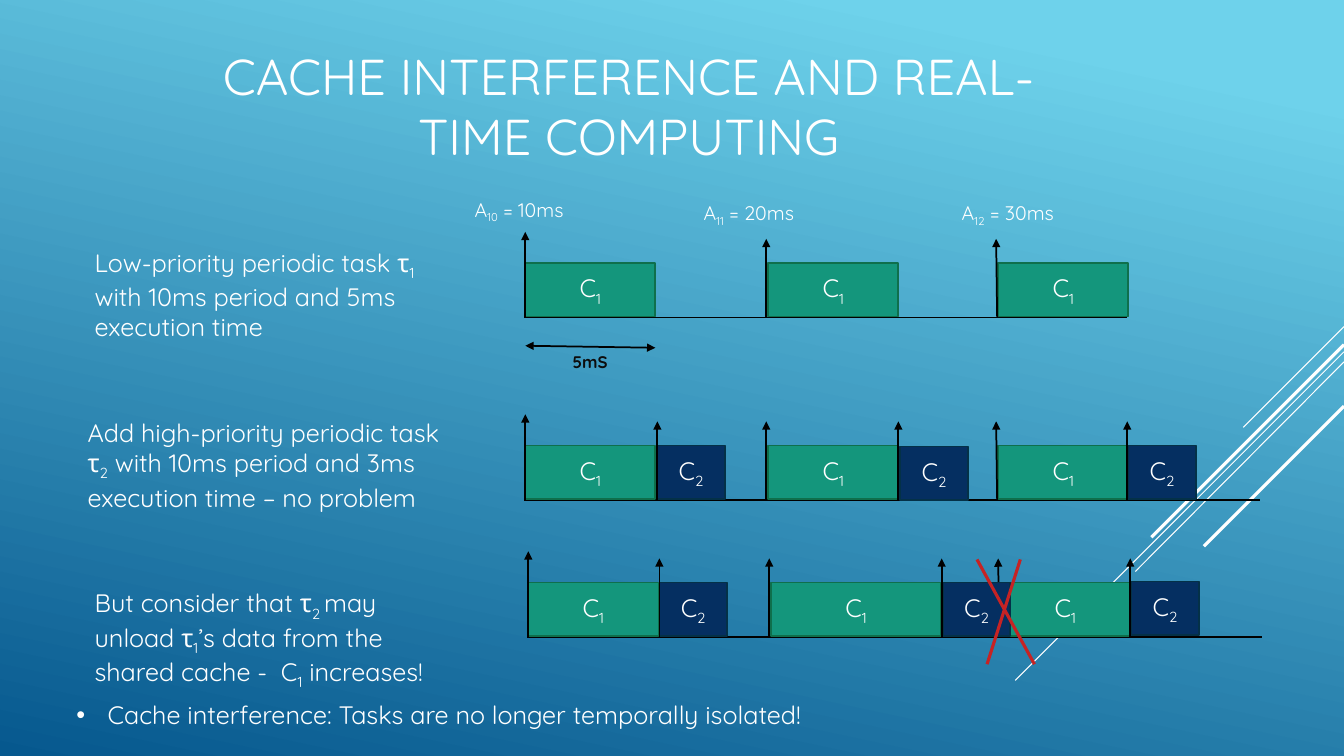
"""Builds the slide on cache interference between two periodic tasks."""
from dataclasses import dataclass

from lxml.etree import SubElement
from pptx import Presentation
from pptx.dml.color import RGBColor
from pptx.enum.shapes import MSO_CONNECTOR, MSO_SHAPE
from pptx.enum.text import MSO_ANCHOR, MSO_AUTO_SIZE, PP_ALIGN
from pptx.oxml.ns import qn
from pptx.slide import Slide
from pptx.text.text import TextFrame
from pptx.util import Emu, Pt

EMU_PER_PX = 9144


@dataclass(frozen=True)
class Theme:
    font: str = "Quicksand"
    white: str = "FFFFFF"
    black: str = "000000"
    near_black: str = "0D0D0D"
    red: str = "C62324"
    sky: str = "6ED2EB"
    deep: str = "06588E"
    task_fills: tuple[str, str] = ("14967C", "052F61")
    task_edges: tuple[str, str] = ("0F6F4C", "043148")
    title: int = 36
    body: int = 18
    release: int = 14
    duration: int = 12
    hairline: float = 0.75
    axis: float = 1.25
    bold_line: float = 2.25


THEME = Theme()


@dataclass(frozen=True)
class Line:
    x1: int
    y1: int
    x2: int
    y2: int
    color: str = THEME.black
    weight: float = THEME.axis
    head: bool = False
    tail: bool = False


@dataclass(frozen=True)
class Label:
    x: int
    y: int
    w: int
    h: int
    text: str
    size: int = THEME.body
    color: str = THEME.white
    bold: bool = False
    align: PP_ALIGN = PP_ALIGN.LEFT
    anchor: MSO_ANCHOR = MSO_ANCHOR.TOP
    grow: bool = True
    bullet: bool = False


@dataclass(frozen=True)
class Job:
    x: int
    w: int
    dy: int = 0


@dataclass(frozen=True)
class Release:
    x: int
    rise: int = 78
    lean: int = 0


@dataclass(frozen=True)
class Timeline:
    left: int
    right: int
    base: int
    jobs: tuple[tuple[Job, ...], ...]
    releases: tuple[tuple[Release, ...], ...]


C1_W, C2_W, JOB_H = 129, 67, 53
LOW_JOBS = (Job(521, C1_W), Job(762, C1_W), Job(990, C1_W))
LOW_RELEASES = (Release(521, 85), Release(760), Release(989, lean=-1))

TIMELINES = (
    Timeline(520, 1118, 315, (LOW_JOBS,), (LOW_RELEASES,)),
    Timeline(520, 1250, 496,
             (LOW_JOBS, (Job(652, C2_W), Job(893, C2_W, 1), Job(1119, C2_W))),
             (LOW_RELEASES, (Release(652), Release(891), Release(1118)))),
    Timeline(523, 1252, 632,
             ((Job(524, C1_W), Job(765, 168), Job(992, C1_W)),
              (Job(654, C2_W), Job(935, C2_W), Job(1122, C2_W, -1))),
             ((Release(524, 85), Release(763), Release(991, lean=-1)),
              (Release(654), Release(934), Release(1121)))),
)

RAYS = tuple(Line(1333, y1, x2, y2, THEME.white, weight) for y1, x2, y2, weight in (
    (324, 1233, 424, THEME.hairline),
    (349, 1007, 675, THEME.hairline),
    (359, 1126, 567, THEME.hairline),
    (342, 1142, 533, THEME.bold_line),
    (403, 1194, 542, THEME.bold_line),
))

MARKS = (
    Line(521, 343, 650, 345, head=True, tail=True),
    Line(969, 555, 1026, 659, THEME.red, THEME.bold_line),
    Line(1012, 555, 979, 659, THEME.red, THEME.bold_line),
)

LABELS = (
    Label(157, 22, 933, 165, "CACHE INTERFERENCE AND REAL-TIME COMPUTING", THEME.title,
          align=PP_ALIGN.CENTER, anchor=MSO_ANCHOR.MIDDLE, grow=False),
    Label(461, 191, 189, 34, "A_10_ = 10ms", THEME.release),
    Label(688, 194, 189, 34, "A_11_ = 20ms", THEME.release),
    Label(944, 194, 189, 34, "A_12_ = 30ms", THEME.release),
    Label(84, 240, 377, 101,
          "Low-priority periodic task τ_1_ with 10ms period and 5ms execution time"),
    Label(77, 409, 385, 101, "Add high-priority periodic task τ_2_ with 10ms period "
                             "and 3ms execution time – no problem"),
    Label(558, 344, 92, 30, "5mS", THEME.duration, THEME.near_black, bold=True),
    Label(84, 578, 385, 101, "But consider that τ_2 _may unload τ_1_’s data from the "
                             "shared cache -  C_1_ increases!"),
    Label(66, 689, 1167, 40, "Cache interference: Tasks are no longer temporally isolated!",
          bullet=True),
)


def px(n: int) -> Emu:
    """Turn px into EMU."""
    return Emu(n * EMU_PER_PX)


def rgb(color: str) -> RGBColor:
    """Turn a hex string into a colour."""
    return RGBColor.from_string(color)


def write(tf: TextFrame, label: Label) -> None:
    """Write the text run by run, with subscripts between underscores."""
    tf.word_wrap = True
    tf.vertical_anchor = label.anchor
    p = tf.paragraphs[0]
    p.alignment = label.align
    for i, part in enumerate(label.text.split("_")):
        if not part:
            continue
        r = p.add_run()
        r.text = part
        r.font.name = THEME.font
        r.font.size = Pt(label.size)
        r.font.bold = label.bold
        r.font.color.rgb = rgb(label.color)
        if i % 2:
            r._r.get_or_add_rPr().set("baseline", "-25000")
    if label.bullet:
        pPr = p._p.get_or_add_pPr()
        pPr.set("marL", str(px(31)))
        pPr.set("indent", str(px(-31)))
        SubElement(pPr, qn("a:buFont")).set("typeface", "Arial")
        SubElement(pPr, qn("a:buChar")).set("char", "•")


def draw_label(s: Slide, label: Label) -> None:
    """Draw a text box."""
    tf = s.shapes.add_textbox(px(label.x), px(label.y), px(label.w), px(label.h)).text_frame
    write(tf, label)
    tf.auto_size = MSO_AUTO_SIZE.SHAPE_TO_FIT_TEXT if label.grow else MSO_AUTO_SIZE.NONE


def draw_line(s: Slide, line: Line) -> None:
    """Draw a straight line with optional arrowheads."""
    c = s.shapes.add_connector(MSO_CONNECTOR.STRAIGHT, px(line.x1), px(line.y1),
                               px(line.x2), px(line.y2))
    c.line.color.rgb = rgb(line.color)
    c.line.width = Pt(line.weight)
    spPr = c._element.spPr
    ln = spPr.find(qn("a:ln"))
    for tag, wanted in (("a:headEnd", line.head), ("a:tailEnd", line.tail)):
        if wanted:
            SubElement(ln, qn(tag)).set("type", "triangle")
    SubElement(spPr, qn("a:effectLst"))


def draw_job(s: Slide, job: Job, base: int, task: int) -> None:
    """Draw one execution block of a task."""
    x, y = job.x, base - JOB_H - 1 + job.dy
    sp = s.shapes.add_shape(MSO_SHAPE.RECTANGLE, px(x), px(y), px(job.w), px(JOB_H))
    sp.shadow.inherit = False
    sp.fill.solid()
    sp.fill.fore_color.rgb = rgb(THEME.task_fills[task])
    sp.line.color.rgb = rgb(THEME.task_edges[task])
    sp.line.width = Pt(THEME.axis)
    write(sp.text_frame, Label(x, y, job.w, JOB_H, f"C_{task + 1}_",
                               align=PP_ALIGN.CENTER, anchor=MSO_ANCHOR.MIDDLE))


def draw_timeline(s: Slide, row: Timeline) -> None:
    """Draw a time axis with the jobs and releases of each task."""
    draw_line(s, Line(row.left, row.base, row.right, row.base))
    for task, (jobs, releases) in enumerate(zip(row.jobs, row.releases)):
        for job in jobs:
            draw_job(s, job, row.base, task)
        for rel in releases:
            draw_line(s, Line(rel.x, row.base, rel.x + rel.lean, row.base - rel.rise, tail=True))


def paint_background(s: Slide) -> None:
    """Fill the background with the blue gradient."""
    fill = s.background.fill
    fill.gradient()
    fill.gradient_angle = 360 - 102
    for stop, color, position in zip(fill.gradient_stops, (THEME.sky, THEME.deep), (0.1, 1)):
        stop.color.rgb = rgb(color)
        stop.position = position


def main() -> None:
    """Build and save the slide."""
    prs = Presentation()
    prs.slide_width, prs.slide_height = px(1333), px(750)
    s = prs.slides.add_slide(prs.slide_layouts[6])
    paint_background(s)
    for ray in RAYS:
        draw_line(s, ray)
    for row in TIMELINES:
        draw_timeline(s, row)
    for mark in MARKS:
        draw_line(s, mark)
    for label in LABELS:
        draw_label(s, label)
    prs.save("out.pptx")


if __name__ == "__main__":
    main()
